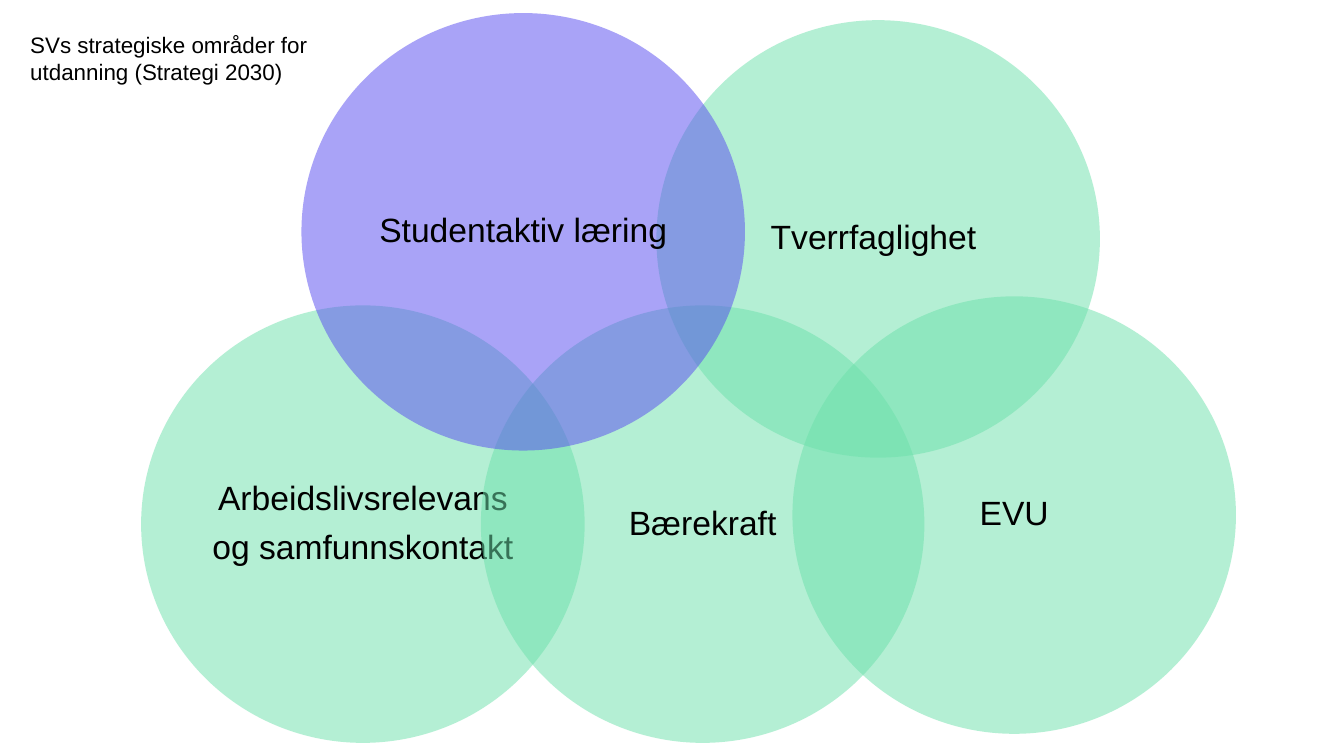
from lxml.etree import SubElement
from pptx import Presentation
from pptx.dml.color import RGBColor
from pptx.enum.shapes import MSO_SHAPE as Preset
from pptx.enum.text import MSO_ANCHOR as Anchor, MSO_AUTO_SIZE as AutoSize, PP_ALIGN as Align
from pptx.oxml.ns import qn
from pptx.util import Inches, Pt

COLORS = {"text": "000000", "area": "6CE1AB", "focus": "584BF0"}
CIRCLE_SIZE = (33, 57.87)
CIRCLES = [
    (10.5, 40.4, "area", ["Arbeidslivsrelevans", "og samfunnskontakt"]),
    (58.96, 39.2, "area", ["EVU"]),
    (35.78, 40.4, "area", ["Bærekraft"]),
    (48.84, 2.67, "area", ["Tverrfaglighet "]),
    (22.43, 1.73, "focus", ["Studentaktiv læring"]),
]


def write(frame, lines, size=24, align=Align.CENTER, anchor=Anchor.MIDDLE,
          spacing=1.0, after=0, insets=(0, 0)):
    frame.auto_size = AutoSize.NONE
    frame.word_wrap = True
    frame.vertical_anchor = anchor
    frame.margin_left = frame.margin_right = Inches(insets[0])
    frame.margin_top = frame.margin_bottom = Inches(insets[1])
    for index, line in enumerate(lines):
        paragraph = frame.add_paragraph() if index else frame.paragraphs[0]
        paragraph.alignment = align
        paragraph.line_spacing = spacing
        paragraph.space_before = Pt(0)
        paragraph.space_after = Pt(after)
        run = paragraph.add_run()
        run.text = line
        run.font.name = "Arial"
        run.font.size = Pt(size)
        run.font.color.rgb = RGBColor.from_string(COLORS["text"])


class SlideBuilder:
    def __init__(self, presentation):
        self.width = presentation.slide_width
        self.height = presentation.slide_height
        self.slide = presentation.slides.add_slide(presentation.slide_layouts[5])

    def box(self, left, top, width, height):
        return (round(self.width * left / 100), round(self.height * top / 100),
                round(self.width * width / 100), round(self.height * height / 100))

    def title(self, text, *place):
        shape = self.slide.shapes.title
        shape.left, shape.top, shape.width, shape.height = self.box(*place)
        write(shape.text_frame, [text], size=16, align=Align.LEFT,
              anchor=Anchor.TOP, insets=(0.1, 0.05))

    def circle(self, left, top, color, lines, opacity=51):
        shape = self.slide.shapes.add_shape(Preset.OVAL, *self.box(left, top, *CIRCLE_SIZE))
        shape.shadow.inherit = False
        shape.line.fill.background()
        shape.fill.solid()
        shape.fill.fore_color.rgb = RGBColor.from_string(COLORS[color])
        fill_color = shape.fill._xPr.find(qn("a:solidFill"))[0]
        SubElement(fill_color, qn("a:alpha")).set("val", str(opacity * 1000))
        write(shape.text_frame, lines, spacing=0.9, after=9.6)


def main():
    presentation = Presentation()
    presentation.slide_width = Inches(13.33)
    presentation.slide_height = Inches(7.5)
    builder = SlideBuilder(presentation)
    builder.title("SVs strategiske områder for utdanning (Strategi 2030)", 1.5, 3.47, 25.43, 8.53)
    for circle in CIRCLES:
        builder.circle(*circle)
    presentation.save("out.pptx")


if __name__ == "__main__":
    main()
